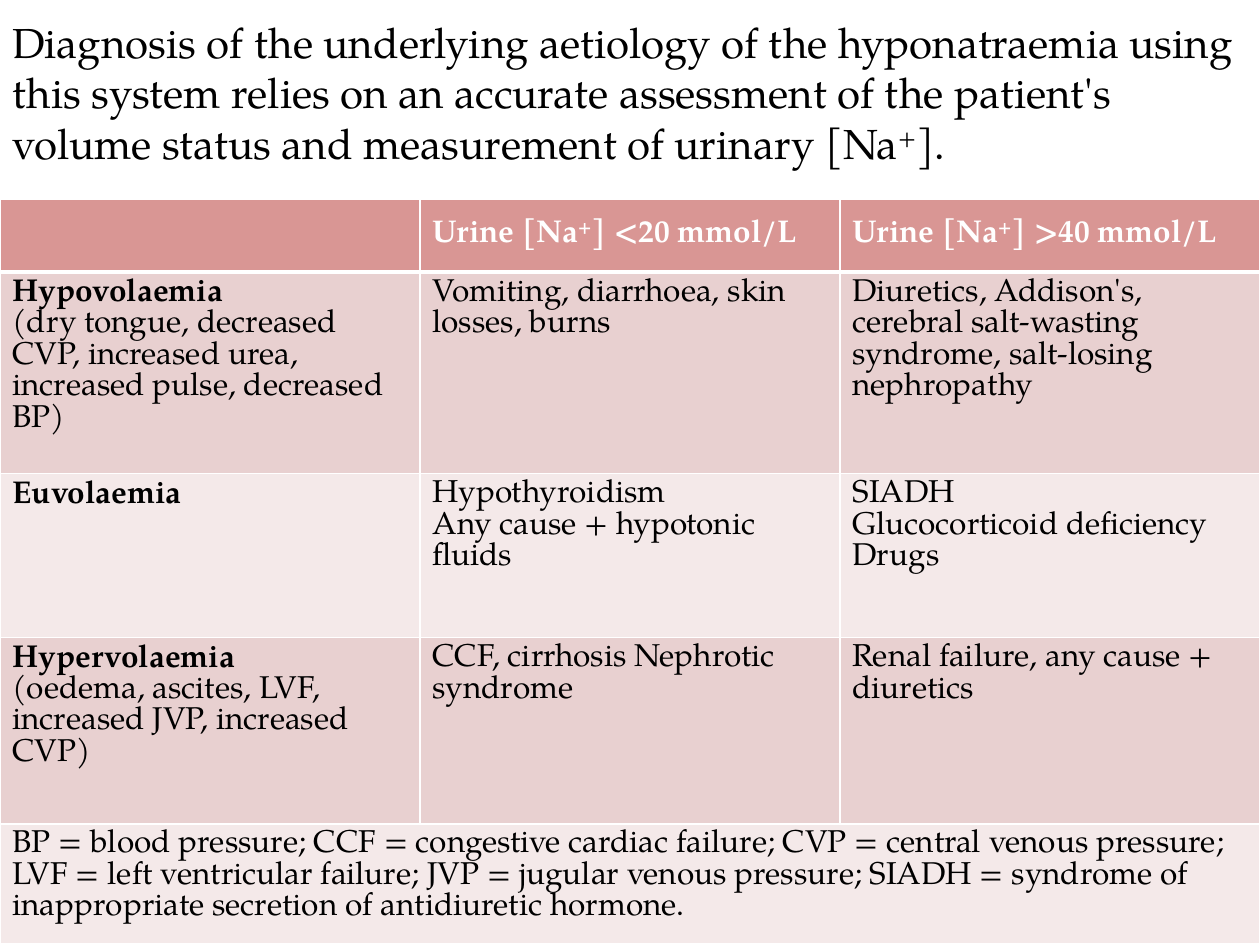
from lxml import etree
from pptx import Presentation
from pptx import util as u
from pptx.dml.color import RGBColor
from pptx.enum import text
from pptx.oxml import ns

FONT = "TeX Gyre Pagella"
WIDTH, HEIGHT = u.Inches(10), u.Inches(7.5)
BLACK, WHITE = "000000", "FFFFFF"
HEADER_FILL, BAND_FILLS = "D99694", ("E8D0D0", "F4E9E9")
TABLE_TOP = 1.58
ROW_HEIGHTS = (0.58, 1.6, 1.3, 1.48, 0.95)

TITLE = ("Diagnosis of the underlying aetiology of the hyponatraemia using this "
         "system relies on an accurate assessment of the patient's volume status "
         "and measurement of urinary [Na^+^].")
HEADERS = ("", "Urine [Na^+^] <20 mmol/L", "Urine [Na^+^] >40 mmol/L")
# Each cell is a list of paragraphs; the first one in a row is its bold label
BODY = (
    (["Hypovolaemia",
      "(dry tongue, decreased CVP, increased urea, increased pulse, decreased BP)"],
     ["Vomiting, diarrhoea, skin losses, burns"],
     ["Diuretics, Addison's, cerebral salt-wasting syndrome, salt-losing nephropathy"]),
    (["Euvolaemia"],
     ["Hypothyroidism", "Any cause + hypotonic fluids"],
     ["SIADH", "Glucocorticoid deficiency Drugs"]),
    (["Hypervolaemia", "(oedema, ascites, LVF, increased JVP, increased CVP)"],
     ["CCF, cirrhosis Nephrotic syndrome"],
     ["Renal failure, any cause + diuretics"]),
)
ABBREVIATIONS = (
    "BP = blood pressure; CCF = congestive cardiac failure; CVP = central venous "
    "pressure; LVF = left ventricular failure; JVP = jugular venous pressure; "
    "SIADH = syndrome of inappropriate secretion of antidiuretic hormone.")


def color(hex_string):
    return RGBColor.from_string(hex_string)


def write(paragraph, content, size, hex_string=BLACK, bold=False):
    """Write text in which ^marks^ enclose a superscript."""
    for index, part in enumerate(content.split("^")):
        run = paragraph.add_run()
        run.text = part
        if index % 2:
            run.font._element.set("baseline", "30000")
    font = paragraph.font
    font.name, font.size, font.bold = FONT, u.Pt(size), bold
    font.color.rgb = color(hex_string)


def add_title(slide):
    box = slide.shapes.add_textbox(0, u.Inches(0.08), WIDTH, u.Inches(1.31))
    box.text_frame.word_wrap = True
    write(box.text_frame.paragraphs[0], TITLE, 24)


def style_cell(cell, fill, top=1, bottom=1):
    """Fill a cell and draw its white borders, widths in points."""
    cell.fill.solid()
    cell.fill.fore_color.rgb = color(fill)
    properties = cell._tc.get_or_add_tcPr()
    sides = (("lnL", 1), ("lnR", 1), ("lnT", top), ("lnB", bottom))
    for index, (side, width) in enumerate(sides):
        line = etree.Element(ns.qn("a:" + side), w=str(u.Pt(width)))
        solid = etree.SubElement(line, ns.qn("a:solidFill"))
        etree.SubElement(solid, ns.qn("a:srgbClr"), val=WHITE)
        properties.insert(index, line)


def fill_header(cell, content):
    style_cell(cell, HEADER_FILL, bottom=3)
    cell.vertical_anchor = text.MSO_ANCHOR.MIDDLE
    cell.margin_top = cell.margin_bottom = u.Inches(0.1)
    if content:
        write(cell.text_frame.paragraphs[0], content, 18, WHITE, bold=True)


def fill_body(cell, paragraphs, has_label=False):
    frame = cell.text_frame
    for index, content in enumerate(paragraphs):
        paragraph = frame.add_paragraph() if index else frame.paragraphs[0]
        paragraph.line_spacing = u.Pt(18)
        write(paragraph, content, 18, bold=has_label and index == 0)


def add_table(slide):
    row_count, column_count = len(ROW_HEIGHTS), len(HEADERS)
    table = slide.shapes.add_table(
        row_count, column_count, 0, u.Inches(TABLE_TOP),
        WIDTH, u.Inches(sum(ROW_HEIGHTS))).table
    for row, height in zip(table.rows, ROW_HEIGHTS):
        row.height = u.Inches(height)

    # Header row
    for column, content in enumerate(HEADERS):
        fill_header(table.cell(0, column), content)

    # Banded rows; the first shares the thick line under the header
    for row in range(1, row_count):
        for column in range(column_count):
            style_cell(table.cell(row, column), BAND_FILLS[(row - 1) % 2],
                       top=3 if row == 1 else 1)
    for row, cells in enumerate(BODY, start=1):
        for column, paragraphs in enumerate(cells):
            fill_body(table.cell(row, column), paragraphs, has_label=column == 0)

    # Abbreviations across the full width
    footer = table.cell(row_count - 1, 0)
    footer.merge(table.cell(row_count - 1, column_count - 1))
    fill_body(footer, [ABBREVIATIONS])


def main():
    presentation = Presentation()
    presentation.slide_width, presentation.slide_height = WIDTH, HEIGHT
    slide = presentation.slides.add_slide(presentation.slide_layouts[6])
    add_title(slide)
    add_table(slide)
    presentation.save("out.pptx")


if __name__ == "__main__":
    main()
